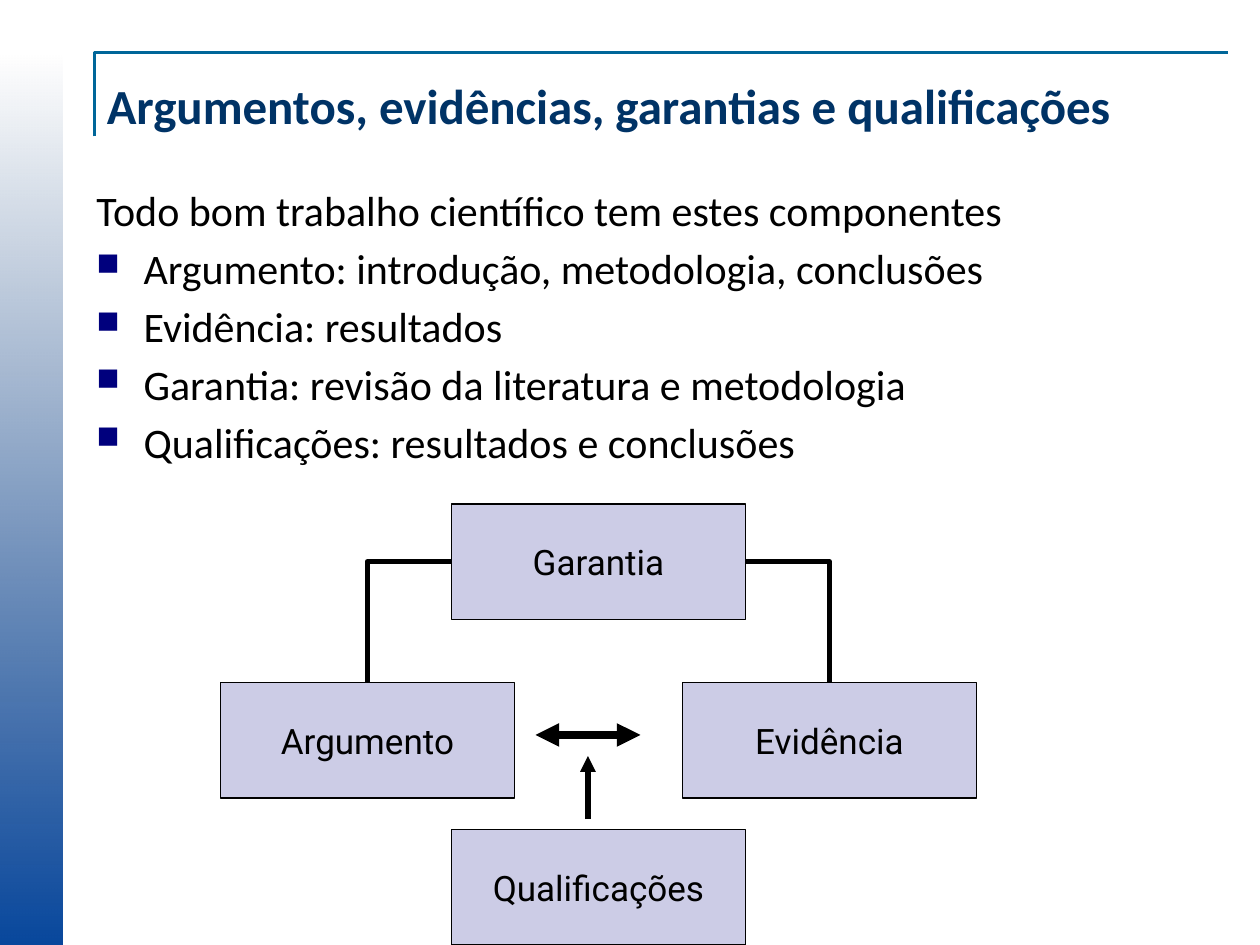
from lxml import etree
from pptx import Presentation
from pptx.dml.color import RGBColor
from pptx.enum import shapes, text
from pptx.oxml import ns
from pptx.util import Pt

COLORS = {
    "band_bottom": "08479C",
    "band_top": "063370",
    "frame": "006699",
    "title": "003366",
    "bullet": "00007D",
    "node": "CCCCE6",
    "ink": "000000",
}

COMPONENTS = [
    "Argumento: introdução, metodologia, conclusões",
    "Evidência: resultados",
    "Garantia: revisão da literatura e metodologia",
    "Qualificações: resultados e conclusões",
]


def rgb(name):
    return RGBColor.from_string(COLORS[name])


def add_child(parent, tag, **attributes):
    return etree.SubElement(parent, ns.qn(tag), attributes)


def set_font(paragraph, name, size, color, bold=False):
    for run in paragraph.runs:
        run.font.name = name
        run.font.size = Pt(size)
        run.font.color.rgb = rgb(color)
        run.font.bold = bold


def add_side_band(slide, left, top, width, height):
    shift = (height - width) / 2
    band = slide.shapes.add_shape(
        shapes.MSO_SHAPE.RECTANGLE,
        Pt(left - shift), Pt(top + shift), Pt(height), Pt(width),
    )
    band.rotation = 270
    band.shadow.inherit = False
    band.line.fill.background()
    band.fill.gradient()
    band.fill.gradient_angle = 0
    for stop, color in zip(band.fill.gradient_stops, ("band_bottom", "band_top")):
        stop.color.rgb = rgb(color)
    top_color = list(band._element.iter(ns.qn("a:srgbClr")))[-1]
    add_child(top_color, "a:alpha", val="0")


def add_title(slide, left, top, width, height):
    outline = slide.shapes.build_freeform(Pt(left), Pt(top + 48))
    outline.add_line_segments(
        [(Pt(left), Pt(top)), (Pt(left + 648), Pt(top))], close=False
    )
    frame = outline.convert_to_shape()
    frame.shadow.inherit = False
    frame.fill.background()
    frame.line.color.rgb = rgb("frame")
    frame.line.width = Pt(1.5)

    title = slide.shapes.add_textbox(Pt(left), Pt(top), Pt(width), Pt(height)).text_frame
    title.word_wrap = True
    title.vertical_anchor = text.MSO_ANCHOR.MIDDLE
    title.text = "Argumentos, evidências, garantias e qualificações"
    set_font(title.paragraphs[0], "Calibri", 28, "title", bold=True)


def add_bullet(paragraph):
    properties = paragraph._p.get_or_add_pPr()
    properties.set("marL", str(Pt(27)))
    properties.set("indent", str(-Pt(27)))
    bullet_color = add_child(properties, "a:buClr")
    add_child(bullet_color, "a:srgbClr", val=COLORS["bullet"])
    add_child(properties, "a:buSzPct", val="75000")
    add_child(properties, "a:buChar", char="■")


def add_body(slide, left, top, width, height):
    body = slide.shapes.add_textbox(Pt(left), Pt(top), Pt(width), Pt(height)).text_frame
    body.word_wrap = True
    body.text = "Todo bom trabalho científico tem estes componentes"
    for component in COMPONENTS:
        item = body.add_paragraph()
        item.text = component
        item.space_before = Pt(4.25)
        add_bullet(item)
    for paragraph in body.paragraphs:
        set_font(paragraph, "Calibri", 24, "ink")


def add_node(slide, label, left, top, width, height):
    node = slide.shapes.add_shape(
        shapes.MSO_SHAPE.RECTANGLE, Pt(left), Pt(top), Pt(width), Pt(height)
    )
    node.shadow.inherit = False
    node.fill.solid()
    node.fill.fore_color.rgb = rgb("node")
    node.line.color.rgb = rgb("ink")
    node.line.width = Pt(0.75)
    frame = node.text_frame
    frame.word_wrap = False
    frame.vertical_anchor = text.MSO_ANCHOR.MIDDLE
    frame.text = label
    frame.paragraphs[0].alignment = text.PP_ALIGN.CENTER
    set_font(frame.paragraphs[0], "Roboto", 20, "ink")
    return node


def add_link(slide, kind, start, end, weight, arrowheads=()):
    link = slide.shapes.add_connector(kind, *map(Pt, start + end))
    link.line.color.rgb = rgb("ink")
    link.line.width = Pt(weight)
    for arrowhead in arrowheads:
        add_child(link.line._get_or_add_ln(), arrowhead, type="triangle")
    add_child(link._element.spPr, "a:effectLst")
    return link


def add_diagram(slide, left, top, width, height):
    node_width, node_height = 168, 66
    step = (width - node_width) / 2
    center = left + step
    middle = top + 102
    right = left + 2 * step

    add_node(slide, "Argumento", left, middle, node_width, node_height)
    add_node(slide, "Evidência", right, middle, node_width, node_height)
    add_node(slide, "Garantia", center, top, node_width, node_height)
    add_node(slide, "Qualificações", center, top + height - node_height,
             node_width, node_height)

    elbow, straight = shapes.MSO_CONNECTOR.ELBOW, shapes.MSO_CONNECTOR.STRAIGHT
    side_y = top + node_height / 2
    for side_x, target_left in ((center, left), (center + node_width, right)):
        bend = add_link(slide, elbow, (side_x, side_y),
                        (target_left + node_width / 2, middle), 3)
        bend._element.spPr.find(ns.qn("a:prstGeom")).set("prst", "bentConnector2")

    arrow_x, arrow_y = left + 210, middle + 30
    add_link(slide, straight, (arrow_x - 30, arrow_y), (arrow_x + 30, arrow_y),
             4.5, ("a:headEnd", "a:tailEnd"))
    add_link(slide, straight, (arrow_x, arrow_y + 48), (arrow_x, arrow_y + 12),
             3, ("a:tailEnd",))


def main():
    deck = Presentation()
    deck.slide_width, deck.slide_height = Pt(720), Pt(540)
    slide = deck.slides.add_slide(deck.slide_layouts[6])
    add_side_band(slide, 0, 30, 36, 510)
    add_title(slide, 54, 30, 642, 60)
    add_body(slide, 48, 102, 648, 162)
    add_diagram(slide, 126, 288, 432, 252)
    deck.save("out.pptx")


if __name__ == "__main__":
    main()
